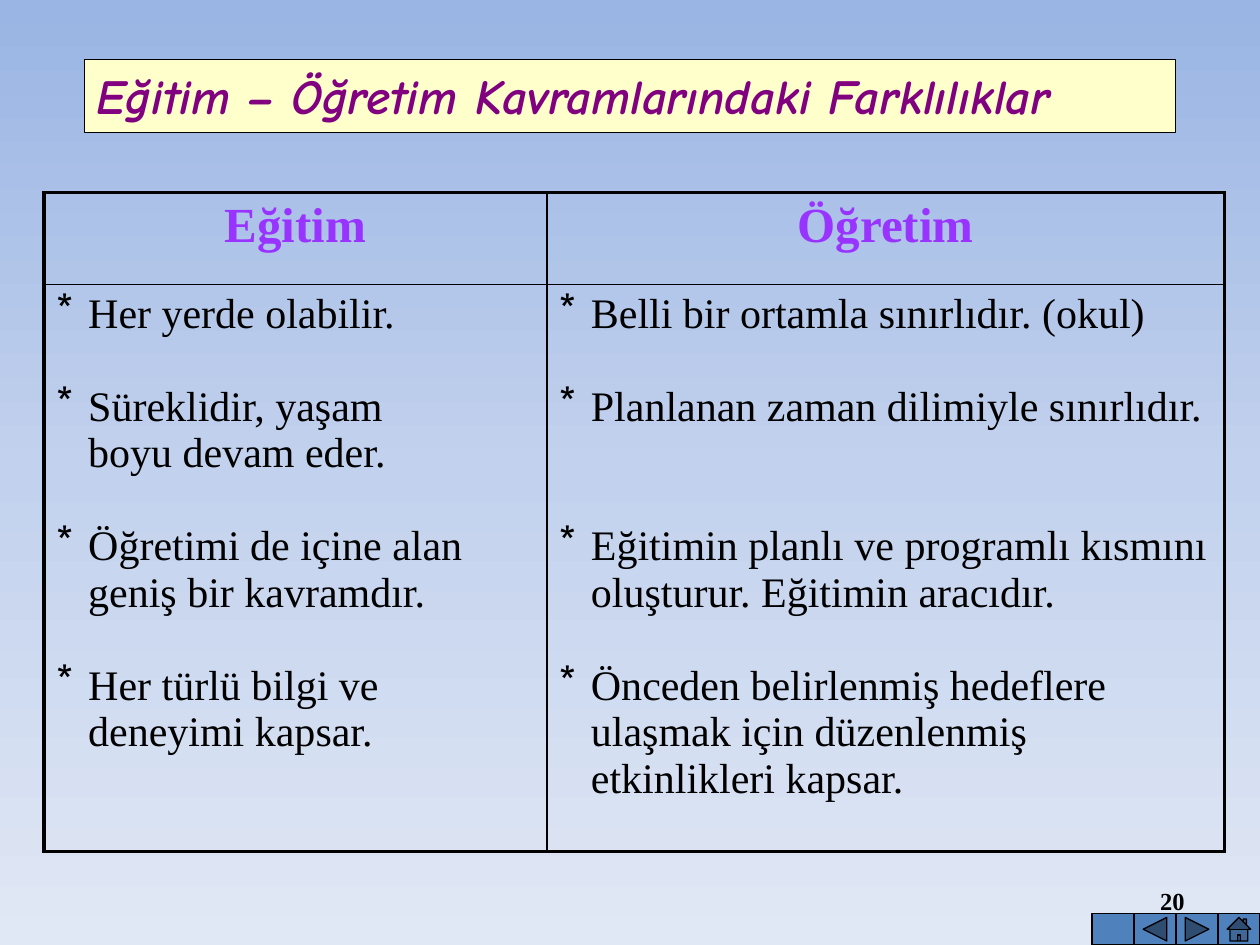
from copy import deepcopy
from dataclasses import dataclass

from pptx import Presentation
from pptx.dml.color import RGBColor
from pptx.enum.shapes import MSO_SHAPE
from pptx.enum.text import MSO_ANCHOR, PP_ALIGN
from pptx.oxml.ns import qn
from pptx.oxml.xmlchemy import OxmlElement
from pptx.util import Inches, Pt

RECT = MSO_SHAPE.RECTANGLE
BUTTONS = (MSO_SHAPE.ACTION_BUTTON_CUSTOM,
           MSO_SHAPE.ACTION_BUTTON_BACK_OR_PREVIOUS,
           MSO_SHAPE.ACTION_BUTTON_FORWARD_OR_NEXT,
           MSO_SHAPE.ACTION_BUTTON_HOME)
LEFT, CENTER, RIGHT = PP_ALIGN.LEFT, PP_ALIGN.CENTER, PP_ALIGN.RIGHT
TOP, MIDDLE = MSO_ANCHOR.TOP, MSO_ANCHOR.MIDDLE


@dataclass(frozen=True)
class Theme:
    background: tuple = ("9AB5E4", "C2D1ED", "E1E8F5")
    ink: str = "000000"
    title: str = "800080"
    title_fill: str = "FFFFCC"
    heading: str = "9933FF"
    button: str = "4F81BD"
    title_font: str = "Comic Neue"
    body_font: str = "Times New Roman"
    large: int = 28
    body: int = 24
    small: int = 14
    blank_line: float = 26.6
    thin: float = 0.75
    inner: float = 1
    outer: float = 2.25


T = Theme()

# Each column: heading, then items as (blank lines before, text)
COLUMNS = (
    ("Eğitim", (
        (0, "Her yerde olabilir."),
        (1, "Süreklidir, yaşam\vboyu devam eder."),
        (1, "Öğretimi de içine alan\vgeniş bir kavramdır."),
        (1, "Her türlü bilgi ve\vdeneyimi kapsar."))),
    ("Öğretim", (
        (0, "Belli bir ortamla sınırlıdır. (okul)"),
        (1, "Planlanan zaman dilimiyle sınırlıdır."),
        (2, "Eğitimin planlı ve programlı kısmını\voluşturur. Eğitimin aracıdır."),
        (1, "Önceden belirlenmiş hedeflere\vulaşmak için düzenlenmiş\v"
            "etkinlikleri kapsar."))),
)


def rgb(value):
    return RGBColor.from_string(value)


def style(p, size, color, font=T.body_font, bold=False, italic=False, align=LEFT):
    p.alignment = align
    for r in p.runs:
        r.font.name, r.font.size = font, Pt(size)
        r.font.bold, r.font.italic = bold, italic
        r.font.color.rgb = rgb(color)


def set_background(s):
    fill = s.background.fill
    fill.gradient()
    fill.gradient_angle = 270
    stops = s._element.find(".//" + qn("a:gsLst"))
    stops.insert(1, deepcopy(stops[0]))
    for i, (stop, color) in enumerate(zip(fill.gradient_stops, T.background)):
        stop.position = i / 2
        stop.color.rgb = rgb(color)


def add_box(s, kind, x, y, w, h, fill):
    sp = s.shapes.add_shape(kind, Inches(x), Inches(y), Inches(w), Inches(h))
    sp.shadow.inherit = False
    sp.fill.solid()
    sp.fill.fore_color.rgb = rgb(fill)
    sp.line.color.rgb = rgb(T.ink)
    sp.line.width = Pt(T.thin)
    return sp


def add_title(s, text):
    tf = add_box(s, RECT, 0.67, 0.47, 8.66, 0.58, T.title_fill).text_frame
    tf.vertical_anchor = TOP
    tf.text = text
    style(tf.paragraphs[0], T.large, T.title, T.title_font, True, True)


def add_page_number(s, text):
    tf = s.shapes.add_textbox(Inches(7.17), Inches(6.95),
                              Inches(2.33), Inches(0.4)).text_frame
    tf.word_wrap = True
    tf.vertical_anchor = MIDDLE
    tf.text = text
    style(tf.paragraphs[0], T.small, T.ink, bold=True, align=RIGHT)


def set_borders(cell, widths):
    tcPr = cell._tc.get_or_add_tcPr()
    for i, (side, width) in enumerate(zip("LRTB", widths)):
        ln = OxmlElement(f"a:ln{side}")
        ln.set("w", str(Pt(width)))
        color = OxmlElement("a:srgbClr")
        color.set("val", T.ink)
        fill = OxmlElement("a:solidFill")
        fill.append(color)
        ln.append(fill)
        tcPr.insert(i, ln)


def add_star(p):
    pPr = p._p.get_or_add_pPr()
    pPr.set("marL", str(Inches(0.25)))
    pPr.set("indent", str(-Inches(0.25)))
    bullet = OxmlElement("a:buChar")
    bullet.set("char", "*")
    pPr.append(bullet)


def fill_items(tf, items):
    for i, (gap, text) in enumerate(items):
        p = tf.add_paragraph() if i else tf.paragraphs[0]
        p.text = text
        add_star(p)
        if gap:
            p.space_before = Pt(gap * T.blank_line)
        style(p, T.body, T.ink)
        # Line breaks take the same size as the text
        for br in p._p.findall(qn("a:br")):
            rPr = OxmlElement("a:rPr")
            rPr.set("sz", str(T.body * 100))
            br.append(rPr)


def add_comparison(s):
    table = s.shapes.add_table(2, 2, Inches(0.35), Inches(1.53),
                               Inches(9.37), Inches(5.23)).table
    table.first_row = table.horz_banding = False
    for col, width in zip(table.columns, (3.99, 5.38)):
        col.width = Inches(width)
    for row, height in zip(table.rows, (0.73, 4.5)):
        row.height = Inches(height)
    for c, (heading, items) in enumerate(COLUMNS):
        head, body = table.cell(0, c), table.cell(1, c)
        head.text = heading
        style(head.text_frame.paragraphs[0], T.large, T.heading,
              bold=True, align=CENTER)
        fill_items(body.text_frame, items)
        sides = (T.inner, T.outer) if c else (T.outer, T.inner)
        for cell, ends in ((head, (T.outer, T.inner)), (body, (T.inner, T.outer))):
            cell.fill.background()
            set_borders(cell, sides + ends)


def add_navigation(s):
    step = 1 / 3
    for i, kind in enumerate(BUTTONS):
        add_box(s, kind, 10 - (len(BUTTONS) - i) * step, 7.25, step, 0.25, T.button)


def main():
    prs = Presentation()
    prs.slide_width, prs.slide_height = Inches(10), Inches(7.5)
    s = prs.slides.add_slide(prs.slide_layouts[6])
    set_background(s)
    add_page_number(s, "20")
    add_navigation(s)
    add_title(s, "Eğitim – Öğretim Kavramlarındaki Farklılıklar")
    add_comparison(s)
    prs.save("out.pptx")


if __name__ == "__main__":
    main()
